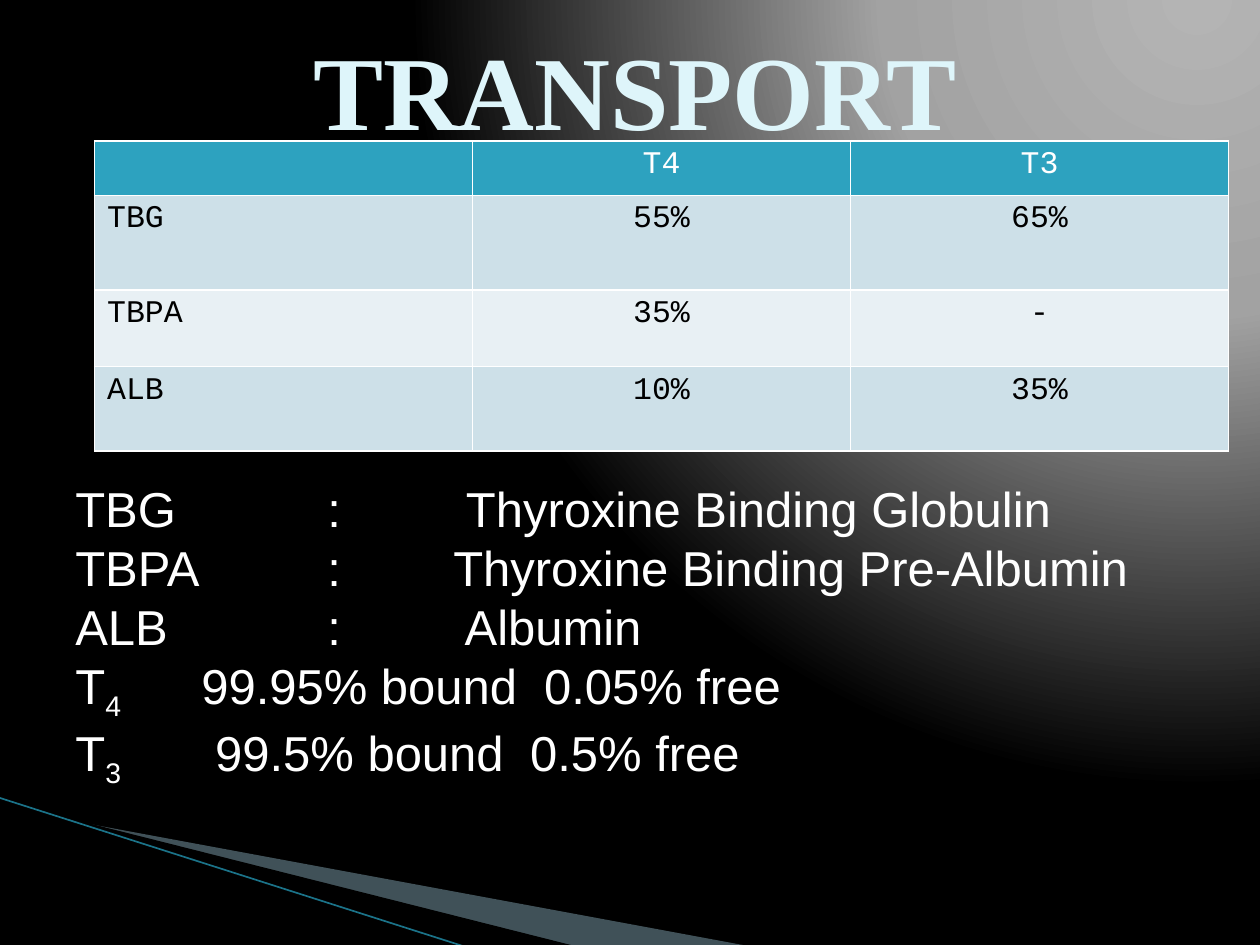
"""Build the thyroid hormone TRANSPORT slide with its binding table and legend."""
import pptx
import pptx.dml.color
import pptx.enum.shapes
import pptx.enum.text
import pptx.oxml
import pptx.oxml.ns
import pptx.util
from lxml import etree
from pptx.util import Inches

THEME = {
    "title": "DEF5FA", "white": "FFFFFF", "black": "000000",
    "header": "2DA2BF", "bands": ("CDE0E8", "E8F0F4"),
    "wedge": "A0CBDC", "streak": "1B7389",
    "glow": ((0, "B4B4B4"), (40, "A2A2A2"), (100, "000000")),
    "title_size": 60, "table_size": 18, "legend_size": 28,
}
NAMESPACE = pptx.oxml.ns.nsdecls("a")
ALIGN = pptx.enum.text.PP_ALIGN


def rgb(value):
    return pptx.dml.color.RGBColor.from_string(value)


def set_font(paragraph, name, size, color, bold=False):
    font = paragraph.font
    font.name, font.size, font.bold = name, pptx.util.Pt(size), bold
    font.color.rgb = rgb(color)


deck = pptx.Presentation()
deck.slide_width, deck.slide_height = Inches(10), Inches(7.5)
page = deck.slides.add_slide(deck.slide_layouts[6])

page.background.fill.gradient()
gradient = page.background._cSld.find(".//" + pptx.oxml.ns.qn("a:gradFill"))
stops = "".join(
    f'<a:gs pos="{position * 1000}"><a:srgbClr val="{color}"/></a:gs>'
    for position, color in THEME["glow"])
gradient.getparent().replace(gradient, pptx.oxml.parse_xml(
    f'<a:gradFill {NAMESPACE} rotWithShape="1"><a:gsLst>{stops}</a:gsLst>'
    '<a:path path="circle"><a:fillToRect l="95000" t="-106000" r="5000" b="206000"/>'
    '</a:path></a:gradFill>'))

wedges = (
    (THEME["wedge"], 40, (0.78, 5.47, 4.16, 1.58),
     ((0.55, 6.51), (5.95, 7.51), (4.56, 7.51), (0.55, 6.5))),
    (THEME["black"], 100, (-0.06, 6.33, 4.16, 0.92),
     ((0.53, 6.49), (4.57, 7.51), (3.72, 7.52), (0.54, 6.5))),
)
for color, opacity, frame, points in wedges:
    corners = [(Inches(x), Inches(y)) for x, y in points]
    builder = page.shapes.build_freeform(*corners[0])
    builder.add_line_segments(corners[1:], close=True)
    wedge = builder.convert_to_shape()
    left, top, width, height = map(Inches, frame)
    outline = wedge._element.spPr.find(".//" + pptx.oxml.ns.qn("a:pathLst"))[0]
    outline.set("w", str(width))
    outline.set("h", str(height))
    for corner in outline.iter(pptx.oxml.ns.qn("a:pt")):
        corner.set("x", str(int(corner.get("x")) + wedge.left - left))
        corner.set("y", str(int(corner.get("y")) + wedge.top - top))
    wedge.left, wedge.top, wedge.width, wedge.height = left, top, width, height
    wedge.shadow.inherit = False
    wedge.fill.solid()
    wedge.fill.fore_color.rgb = rgb(color)
    wedge.line.fill.background()
    tint = wedge._element.spPr.find(".//" + pptx.oxml.ns.qn("a:srgbClr"))
    etree.SubElement(tint, pptx.oxml.ns.qn("a:alpha"), val=str(opacity * 1000))

streak = page.shapes.add_connector(
    pptx.enum.shapes.MSO_CONNECTOR.STRAIGHT,
    Inches(-0.01), Inches(6.33), Inches(3.71), Inches(7.52))
streak.line.color.rgb = rgb(THEME["streak"])
streak.line.width = pptx.util.Pt(0.95)
etree.SubElement(streak._element.spPr, pptx.oxml.ns.qn("a:effectLst"))

title = page.shapes.add_textbox(Inches(0.5), Inches(0.08), Inches(9.08), Inches(1.25))
title.text_frame.word_wrap = True
title.text_frame.vertical_anchor = pptx.enum.text.MSO_ANCHOR.MIDDLE
heading = title.text_frame.paragraphs[0]
heading.text = "TRANSPORT"
heading.alignment = ALIGN.CENTER
set_font(heading, "Times New Roman", THEME["title_size"], THEME["title"], True)

rows = (
    (0.43, ("", "T4", "T3")),
    (0.75, ("TBG", "55%", "65%")),
    (0.61, ("TBPA", "35%", "-")),
    (0.67, ("ALB", "10%", "35%")),
)
table = page.shapes.add_table(
    len(rows), 3, Inches(0.75), Inches(1.12), Inches(9), Inches(2.46)).table
for row_index, (height, values) in enumerate(rows):
    table.rows[row_index].height = Inches(height)
    is_header = row_index == 0
    for column_index, value in enumerate(values):
        cell = table.cell(row_index, column_index)
        cell.text = value
        cell.fill.solid()
        cell.fill.fore_color.rgb = rgb(
            THEME["header"] if is_header else THEME["bands"][(row_index - 1) % 2])
        paragraph = cell.text_frame.paragraphs[0]
        paragraph.alignment = ALIGN.CENTER if column_index else ALIGN.LEFT
        set_font(paragraph, "Courier New", THEME["table_size"],
                 THEME["white"] if is_header else THEME["black"])
        for order, side in enumerate("LRTB"):
            cell._tc.get_or_add_tcPr().insert(order, pptx.oxml.parse_xml(
                f'<a:ln{side} {NAMESPACE} w="12700"><a:solidFill>'
                f'<a:srgbClr val="{THEME["white"]}"/></a:solidFill></a:ln{side}>'))

legend = (
    ((2, 3.1), "TBG", "", "\t:\tThyroxine Binding Globulin"),
    ((2, 3), "TBPA", "", "\t:\tThyroxine Binding Pre-Albumin"),
    ((2, 3.09), "ALB", "", "\t:\tAlbumin"),
    ((1, 3.72), "T", "4", "\t99.95% bound\t0.05% free"),
    ((1.11, 3.61), "T", "3", "\t99.5% bound\t0.5% free"),
)
box = page.shapes.add_textbox(Inches(0.5), Inches(3.75), Inches(9.17), Inches(3.4))
box.text_frame.word_wrap = True
for index, (tabs, label, subscript, meaning) in enumerate(legend):
    paragraph = box.text_frame.paragraphs[0] if index == 0 else box.text_frame.add_paragraph()
    tab_list = etree.SubElement(
        paragraph._p.get_or_add_pPr(), pptx.oxml.ns.qn("a:tabLst"))
    for tab in tabs:
        etree.SubElement(tab_list, pptx.oxml.ns.qn("a:tab"),
                         pos=str(Inches(tab)), algn="l")
    set_font(paragraph, "Arial", THEME["legend_size"], THEME["white"])
    for text in filter(None, (label, subscript, meaning)):
        span = paragraph.add_run()
        span.text = text
        if text == subscript:
            span.font._element.set("baseline", "-25000")

deck.save("out.pptx")
